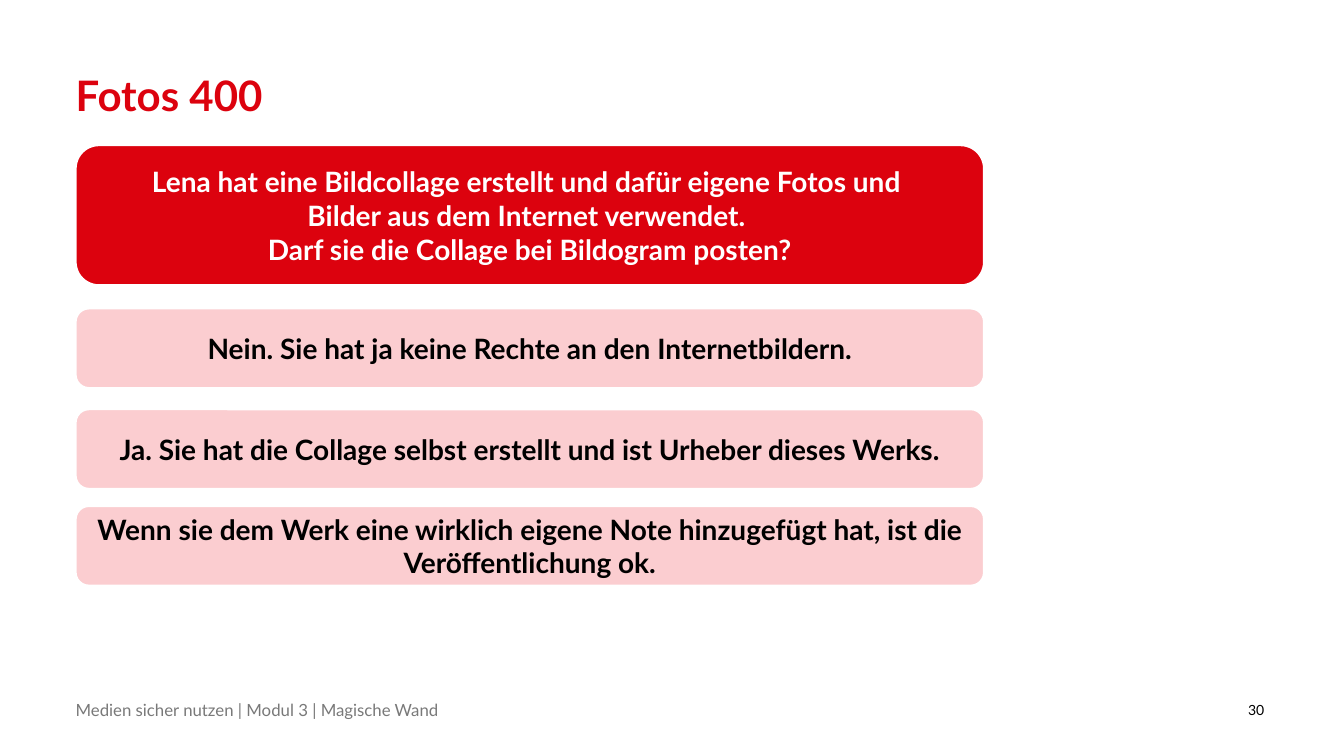
from lxml.etree import SubElement
from pptx import Presentation
from pptx.dml.color import RGBColor
from pptx.enum.shapes import MSO_SHAPE
from pptx.enum.text import MSO_ANCHOR as ANCHOR, MSO_AUTO_SIZE as AUTO, PP_ALIGN as ALIGN
from pptx.oxml.ns import qn
from pptx.util import Inches, Pt


def rgb(code):
    """Turn a hex string into a colour."""
    return RGBColor.from_string(code)


class QuizSlide:
    """Holds the quiz style and the slide being built."""

    FONT = "Lato"
    RED, PINK, WHITE, BLACK, GREY = "DC020E", "FBC1C5", "FFFFFF", "000000", "797979"
    LEFT, CARD_WIDTH = 0.75, 9.01

    def __init__(self, prs):
        """Add a title-only slide."""
        self.s = prs.slides.add_slide(prs.slide_layouts[5])

    def set_text(self, sp, text, size, color, bold=False, align=ALIGN.LEFT,
                 anchor=ANCHOR.MIDDLE, inset=0.0):
        """Fill a shape with one styled paragraph."""
        tf = sp.text_frame
        tf.word_wrap = True
        tf.vertical_anchor = anchor
        tf.margin_left = tf.margin_right = Inches(inset)
        tf.margin_top = tf.margin_bottom = Inches(inset / 2)
        p = tf.paragraphs[0]
        p.text = text
        p.alignment = align
        p.font.name, p.font.size, p.font.bold = self.FONT, Pt(size), bold
        p.font.color.rgb = rgb(color)
        return p

    def title(self, text):
        """Place and format the title placeholder."""
        sp = self.s.shapes.title
        sp.left, sp.top = Inches(self.LEFT), Inches(0.75)
        sp.width, sp.height = Inches(11.81), Inches(0.46)
        p = self.set_text(sp, text, 30, self.RED, bold=True, anchor=ANCHOR.TOP)
        p.line_spacing = 0.9
        sp.text_frame.auto_size = AUTO.SHAPE_TO_FIT_TEXT

    def footer(self, text, left, width, size, color, align=ALIGN.LEFT):
        """Add a text box on the footer line."""
        sp = self.s.shapes.add_textbox(Inches(left), Inches(6.96), Inches(width), Inches(0.16))
        self.set_text(sp, text, size, color, align=align)

    def card(self, text, top, height, fill, color, opacity=100):
        """Add a rounded card with centred bold text."""
        sp = self.s.shapes.add_shape(MSO_SHAPE.ROUNDED_RECTANGLE, Inches(self.LEFT), Inches(top),
                                     Inches(self.CARD_WIDTH), Inches(height))
        sp.shadow.inherit = False
        sp.fill.solid()
        sp.fill.fore_color.rgb = rgb(fill)
        if opacity < 100:
            clr = sp.element.spPr.find(qn("a:solidFill"))[0]
            SubElement(clr, qn("a:alpha")).set("val", str(opacity * 1000))
        sp.line.color.rgb = rgb(self.WHITE)
        sp.line.width = Pt(1.5)
        self.set_text(sp, text, 20, color, bold=True, align=ALIGN.CENTER, inset=0.1)

    def question(self, text):
        """Add the red question card."""
        self.card(text, 1.44, 1.39, self.RED, self.WHITE)

    def answer(self, text, top):
        """Add a translucent pink answer card."""
        self.card(text, top, 0.79, self.PINK, self.BLACK, opacity=80)


def main():
    """Build and save the quiz slide."""
    prs = Presentation()
    prs.slide_width, prs.slide_height = Inches(13.33), Inches(7.5)
    quiz = QuizSlide(prs)
    quiz.title("Fotos 400")
    quiz.footer("Medien sicher nutzen | Modul 3 | Magische Wand", quiz.LEFT, 9.84, 12, quiz.GREY)
    quiz.footer("30", 11.84, 0.7, 10, quiz.BLACK, ALIGN.RIGHT)
    quiz.question("Lena hat eine Bildcollage erstellt und dafür eigene Fotos und \v"
                  "Bilder aus dem Internet verwendet. \v"
                  "Darf sie die Collage bei Bildogram posten?")
    answers = [
        (3.06, "Nein. Sie hat ja keine Rechte an den Internetbildern."),
        (4.06, "Ja. Sie hat die Collage selbst erstellt und ist Urheber dieses Werks."),
        (5.02, "Wenn sie dem Werk eine wirklich eigene Note hinzugefügt hat, "
               "ist die Veröffentlichung ok."),
    ]
    for top, text in answers:
        quiz.answer(text, top)
    prs.save("out.pptx")


if __name__ == "__main__":
    main()
